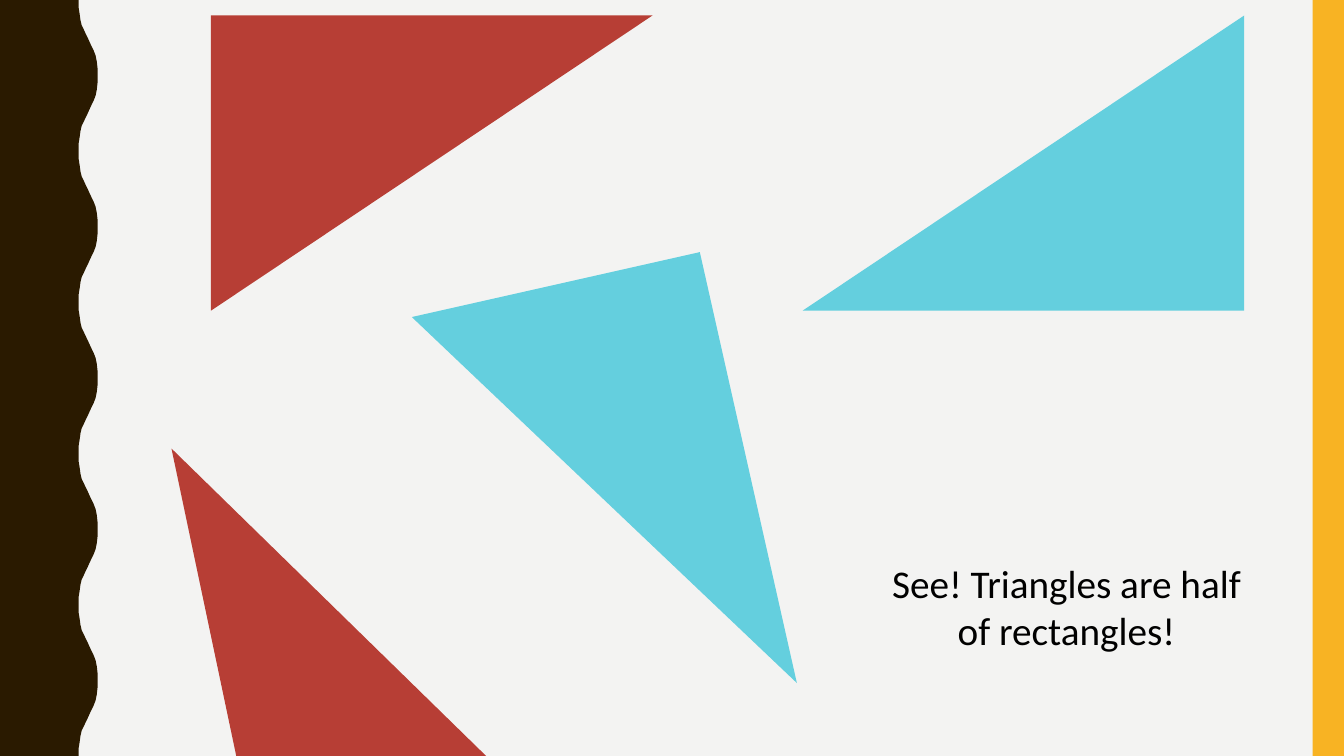
from pptx import Presentation
from pptx.dml.color import RGBColor
from pptx.enum.shapes import MSO_SHAPE
from pptx.enum.text import MSO_ANCHOR, PP_ALIGN
from pptx.util import Cm, Pt

COLORS = {
    "paper": "F3F3F2",
    "brown": "2A1A00",
    "gold": "F8B323",
    "blue": "64CFDE",
    "red": "B73E35",
    "black": "000000",
}
CAPTION = "See! Triangles are half of rectangles!"
WIDTH, HEIGHT = 33.87, 19.05
BAND = 0.79

# Triangles of one size: centre x, centre y, rotation, colour
BASE, RISE = 7.44, 11.13
TRIANGLES = [
    (25.79, 4.11, 270, "blue"),
    (10.88, 4.11, 90, "red"),
    (15.23, 12.6, 167.3, "blue"),
    (9.11, 15.98, 348.1, "red"),
]

# Trough to crest of the wavy edge; each wave is this and its mirror
WAVES = 5
PERIOD = HEIGHT / WAVES
HALF = [
    (1.98, 0), (1.98, 0.18), (2.01, 0.36), (2.03, 0.51), (2.06, 0.64),
    (2.11, 0.74), (2.16, 0.85), (2.21, 0.95), (2.26, 1.06), (2.31, 1.17),
    (2.36, 1.27), (2.41, 1.4), (2.44, 1.55), (2.46, 1.73), (2.46, 1.9),
]


def paint(shape, color):
    shape.shadow.inherit = False
    shape.fill.solid()
    shape.fill.fore_color.rgb = RGBColor.from_string(COLORS[color])
    shape.line.fill.background()


def add_wave(slide):
    wave = HALF + [(x, PERIOD - y) for x, y in reversed(HALF)]
    edge = [(x, y + i * PERIOD) for i in range(WAVES) for x, y in wave]
    points = [(Cm(x), Cm(y)) for x, y in edge + [(0, HEIGHT)]]
    outline = slide.shapes.build_freeform(0, 0)
    outline.add_line_segments(points, close=True)
    paint(outline.convert_to_shape(), "brown")


def add_shape(slide, kind, left, top, width, height, color):
    shape = slide.shapes.add_shape(kind, Cm(left), Cm(top), Cm(width), Cm(height))
    paint(shape, color)
    return shape


def add_caption(slide):
    box = slide.shapes.add_textbox(Cm(22), Cm(13.97), Cm(9.75), Cm(2.64))
    frame = box.text_frame
    frame.word_wrap = True
    frame.vertical_anchor = MSO_ANCHOR.TOP
    line = frame.paragraphs[0]
    line.text = CAPTION
    line.alignment = PP_ALIGN.CENTER
    line.font.name = "Calibri"
    line.font.size = Pt(28)
    line.font.color.rgb = RGBColor.from_string(COLORS["black"])


def main():
    deck = Presentation()
    deck.slide_width, deck.slide_height = Cm(WIDTH), Cm(HEIGHT)
    slide = deck.slides.add_slide(deck.slide_layouts[6])
    back = slide.background.fill
    back.solid()
    back.fore_color.rgb = RGBColor.from_string(COLORS["paper"])

    add_wave(slide)
    add_shape(slide, MSO_SHAPE.RECTANGLE, WIDTH - BAND, 0, BAND, HEIGHT, "gold")
    for x, y, angle, color in TRIANGLES:
        triangle = add_shape(slide, MSO_SHAPE.ISOSCELES_TRIANGLE,
                             x - BASE / 2, y - RISE / 2, BASE, RISE, color)
        triangle.adjustments[0] = 0
        triangle.rotation = angle
    add_caption(slide)
    deck.save("out.pptx")


if __name__ == "__main__":
    main()
